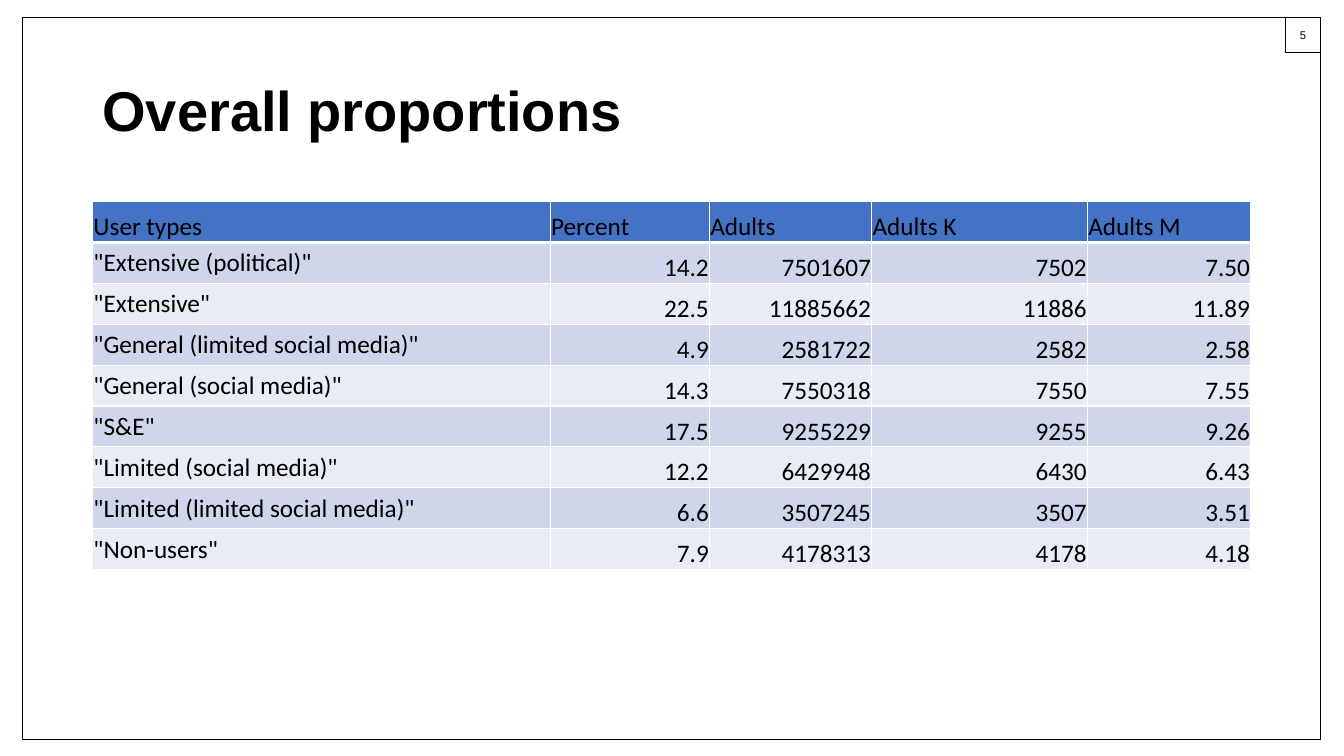
from lxml.etree import SubElement
from pptx import Presentation
from pptx.dml.color import RGBColor
from pptx.enum.shapes import MSO_SHAPE as Shape
from pptx.enum.text import MSO_ANCHOR as Anchor, MSO_AUTO_SIZE as AutoSize, PP_ALIGN as Align
from pptx.oxml.ns import qn
from pptx.util import Pt

BLACK, WHITE = "000000", "FFFFFF"
HEADER_FILL = "4472C4"
BAND_FILLS = ("CFD5EA", "E9EBF5")
COLUMN_WIDTHS = (326.9, 113.8, 115.9, 154.1, 116.6)
ROW_HEIGHT = 29.2
CELL_INSET = 0.6

USER_TYPES = (
    ("User types", "Percent", "Adults", "Adults K", "Adults M"),
    ('"Extensive (political)"', "14.2", "7501607", "7502", "7.50"),
    ('"Extensive"', "22.5", "11885662", "11886", "11.89"),
    ('"General (limited social media)"', "4.9", "2581722", "2582", "2.58"),
    ('"General (social media)"', "14.3", "7550318", "7550", "7.55"),
    ('"S&E"', "17.5", "9255229", "9255", "9.26"),
    ('"Limited (social media)"', "12.2", "6429948", "6430", "6.43"),
    ('"Limited (limited social media)"', "6.6", "3507245", "3507", "3.51"),
    ('"Non-users"', "7.9", "4178313", "4178", "4.18"),
)


def color(hex_string):
    return RGBColor.from_string(hex_string)


def write(frame, text, font_name, size, align, bold=False):
    """Put one formatted paragraph into a text frame."""
    frame.text = text
    para = frame.paragraphs[0]
    para.alignment = align
    for span in para.runs:
        span.font.name = font_name
        span.font.size = Pt(size)
        span.font.bold = bold
        span.font.color.rgb = color(BLACK)


def add_outlined_box(page, left, top, width, height):
    box = page.shapes.add_shape(Shape.RECTANGLE, Pt(left), Pt(top), Pt(width), Pt(height))
    box.shadow.inherit = False
    box.fill.background()
    box.line.color.rgb = color(BLACK)
    box.line.width = Pt(0.5)
    return box


def add_page_number(page, number):
    box = add_outlined_box(page, 918, 12.2, 25.4, 25.4)
    frame = box.text_frame
    frame.margin_left = frame.margin_right = 0
    frame.vertical_anchor = Anchor.MIDDLE
    write(frame, number, "Arial", 8, Align.CENTER)


def set_title(page, text):
    title = page.shapes.title
    title.left, title.top, title.width, title.height = Pt(66), Pt(28.8), Pt(828), Pt(104.4)
    frame = title.text_frame
    frame.auto_size = AutoSize.NONE
    frame.vertical_anchor = Anchor.MIDDLE
    write(frame, text, "Arial", 40, Align.LEFT, bold=True)
    frame.paragraphs[0].line_spacing = 0.9
    # Bring the title in front of the page frame.
    title.element.getparent().append(title.element)


def set_borders(cell, bottom_width):
    properties = cell._tc.get_or_add_tcPr()
    widths = {"a:lnL": 1, "a:lnR": 1, "a:lnT": 1, "a:lnB": bottom_width}
    for position, (tag, width) in enumerate(widths.items()):
        line = SubElement(properties, qn(tag), w=str(Pt(width)))
        fill = SubElement(line, qn("a:solidFill"))
        SubElement(fill, qn("a:srgbClr"), val=WHITE)
        properties.insert(position, line)


def format_cell(cell, text, row, column):
    is_header, is_label = row == 0, column == 0
    cell.margin_left = cell.margin_right = cell.margin_top = Pt(CELL_INSET)
    cell.margin_bottom = 0
    cell.vertical_anchor = Anchor.MIDDLE if is_label and not is_header else Anchor.BOTTOM
    align = Align.LEFT if is_header or is_label else Align.RIGHT
    write(cell.text_frame, text, "Calibri", 18, align)
    cell.fill.solid()
    cell.fill.fore_color.rgb = color(HEADER_FILL if is_header else BAND_FILLS[(row - 1) % 2])
    set_borders(cell, bottom_width=3 if is_header else 1)


def add_data_table(page, rows):
    frame = page.shapes.add_table(
        len(rows), len(COLUMN_WIDTHS), Pt(66.2), Pt(144),
        Pt(sum(COLUMN_WIDTHS)), Pt(ROW_HEIGHT * len(rows)))
    table = frame.table
    for column, width in zip(table.columns, COLUMN_WIDTHS):
        column.width = Pt(width)
    for row, values in enumerate(rows):
        table.rows[row].height = Pt(ROW_HEIGHT)
        for column, text in enumerate(values):
            format_cell(table.cell(row, column), text, row, column)


def main():
    deck = Presentation()
    deck.slide_width, deck.slide_height = Pt(960), Pt(540)
    page = deck.slides.add_slide(deck.slide_layouts[5])
    add_page_number(page, "5")
    add_outlined_box(page, 16.3, 12.2, 927.1, 515.8)
    set_title(page, "Overall proportions")
    add_data_table(page, USER_TYPES)
    deck.save("out.pptx")


if __name__ == "__main__":
    main()
